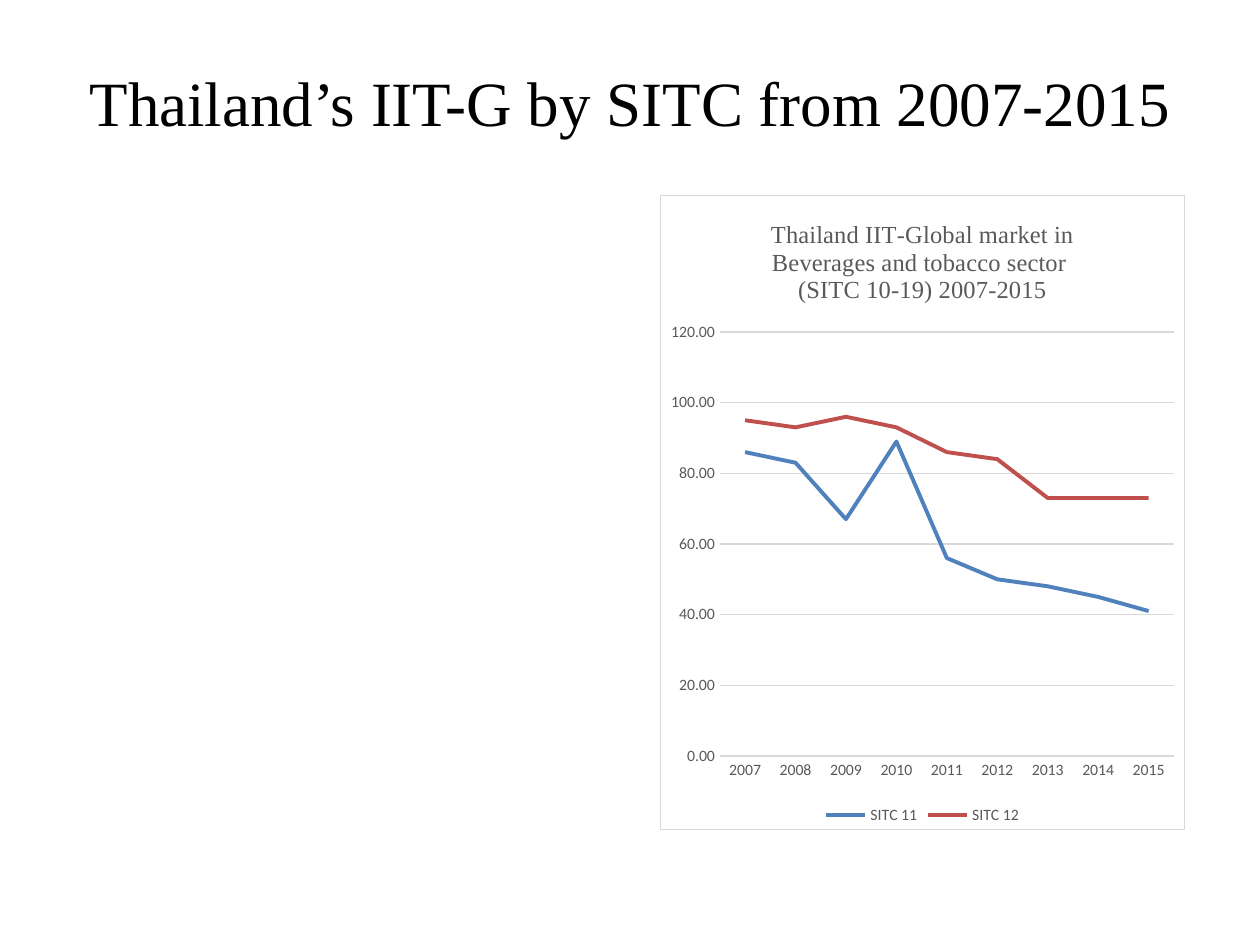
import pptx
import pptx.chart.data
import pptx.dml.color
import pptx.enum.chart
import pptx.enum.text
import pptx.oxml
import pptx.util

TITLE = "Thailand’s IIT-G by SITC from 2007-2015"
CHART_TITLE = ["Thailand IIT-Global market in Beverages and tobacco sector ",
               "(SITC 10-19) 2007-2015"]
YEARS = [str(year) for year in range(2007, 2016)]
SERIES = [
    ("SITC 11", "4F81BD", [86, 83, 67, 89, 56, 50, 48, 45, 41]),
    ("SITC 12", "C0504D", [95, 93, 96, 93, 86, 84, 73, 73, 73]),
]

PX = 914400 // 126
SLIDE = (1260, 945)
TITLE_BOX = (63, 38, 1134, 127)
CHART_BOX = (660, 195, 525, 635)


class Theme:
    serif, sans = "Times New Roman", "Calibri"
    black, grey, rule, white = "000000", "595959", "D9D9D9", "FFFFFF"
    title, chart_title, label = 36, 14, 9
    thin, thick = 0.75, 2.25


def px(box):
    return [n * PX for n in box]


def rgb(color):
    return pptx.dml.color.RGBColor.from_string(color)


def set_font(font, name, size, color):
    font.name, font.size, font.bold = name, pptx.util.Pt(size), False
    font.color.rgb = rgb(color)


def set_line(line, color, width):
    line.color.rgb = rgb(color)
    line.width = pptx.util.Pt(width)


def add_title(s):
    tf = s.shapes.add_textbox(*px(TITLE_BOX)).text_frame
    tf.word_wrap = True
    tf.vertical_anchor = pptx.enum.text.MSO_ANCHOR.MIDDLE
    p = tf.paragraphs[0]
    p.alignment = pptx.enum.text.PP_ALIGN.CENTER
    r = p.add_run()
    r.text = TITLE
    set_font(r.font, Theme.serif, Theme.title, Theme.black)


def frame_chart(chart):
    """Give the chart area its fill and border."""
    ns = pptx.oxml.ns.nsdecls("c", "a")
    sp_pr = pptx.oxml.parse_xml(
        f'<c:spPr {ns}><a:solidFill><a:srgbClr val="{Theme.white}"/></a:solidFill>'
        f'<a:ln w="{pptx.util.Pt(Theme.thin)}"><a:solidFill>'
        f'<a:srgbClr val="{Theme.rule}"/></a:solidFill></a:ln></c:spPr>')
    chart.element.find(pptx.oxml.ns.qn("c:chart")).addnext(sp_pr)


def add_chart(s):
    xl = pptx.enum.chart
    data = pptx.chart.data.CategoryChartData(number_format="0.00")
    data.categories = YEARS
    for name, _, values in SERIES:
        data.add_series(name, values)
    chart = s.shapes.add_chart(xl.XL_CHART_TYPE.LINE, *px(CHART_BOX), data).chart
    set_font(chart.font, Theme.sans, Theme.label, Theme.grey)
    frame_chart(chart)

    tf = chart.chart_title.text_frame
    for i, text in enumerate(CHART_TITLE):
        p = tf.add_paragraph() if i else tf.paragraphs[0]
        r = p.add_run()
        r.text = text
        set_font(r.font, Theme.serif, Theme.chart_title, Theme.grey)
    chart.chart_title.include_in_layout = False

    chart.has_legend = True
    chart.legend.position = xl.XL_LEGEND_POSITION.BOTTOM
    chart.legend.include_in_layout = False
    set_font(chart.legend.font, Theme.sans, Theme.label, Theme.grey)

    cat, val = chart.category_axis, chart.value_axis
    for axis in (cat, val):
        axis.major_tick_mark = axis.minor_tick_mark = xl.XL_TICK_MARK.NONE
        set_font(axis.tick_labels.font, Theme.sans, Theme.label, Theme.grey)
    set_line(cat.format.line, Theme.rule, Theme.thin)
    val.format.line.fill.background()
    set_line(val.major_gridlines.format.line, Theme.rule, Theme.thin)
    val.minimum_scale, val.maximum_scale, val.major_unit = 0, 120, 20
    val.tick_labels.number_format = "0.00"
    val.tick_labels.number_format_is_linked = False

    plot = chart.plots[0]
    plot.vary_by_categories = False
    for series, (_, color, _) in zip(plot.series, SERIES):
        series.smooth = False
        series.marker.style = xl.XL_MARKER_STYLE.NONE
        set_line(series.format.line, color, Theme.thick)


def main():
    prs = pptx.Presentation()
    prs.slide_width, prs.slide_height = px(SLIDE)
    s = prs.slides.add_slide(prs.slide_layouts[6])
    add_title(s)
    add_chart(s)
    prs.save("out.pptx")


if __name__ == "__main__":
    main()
